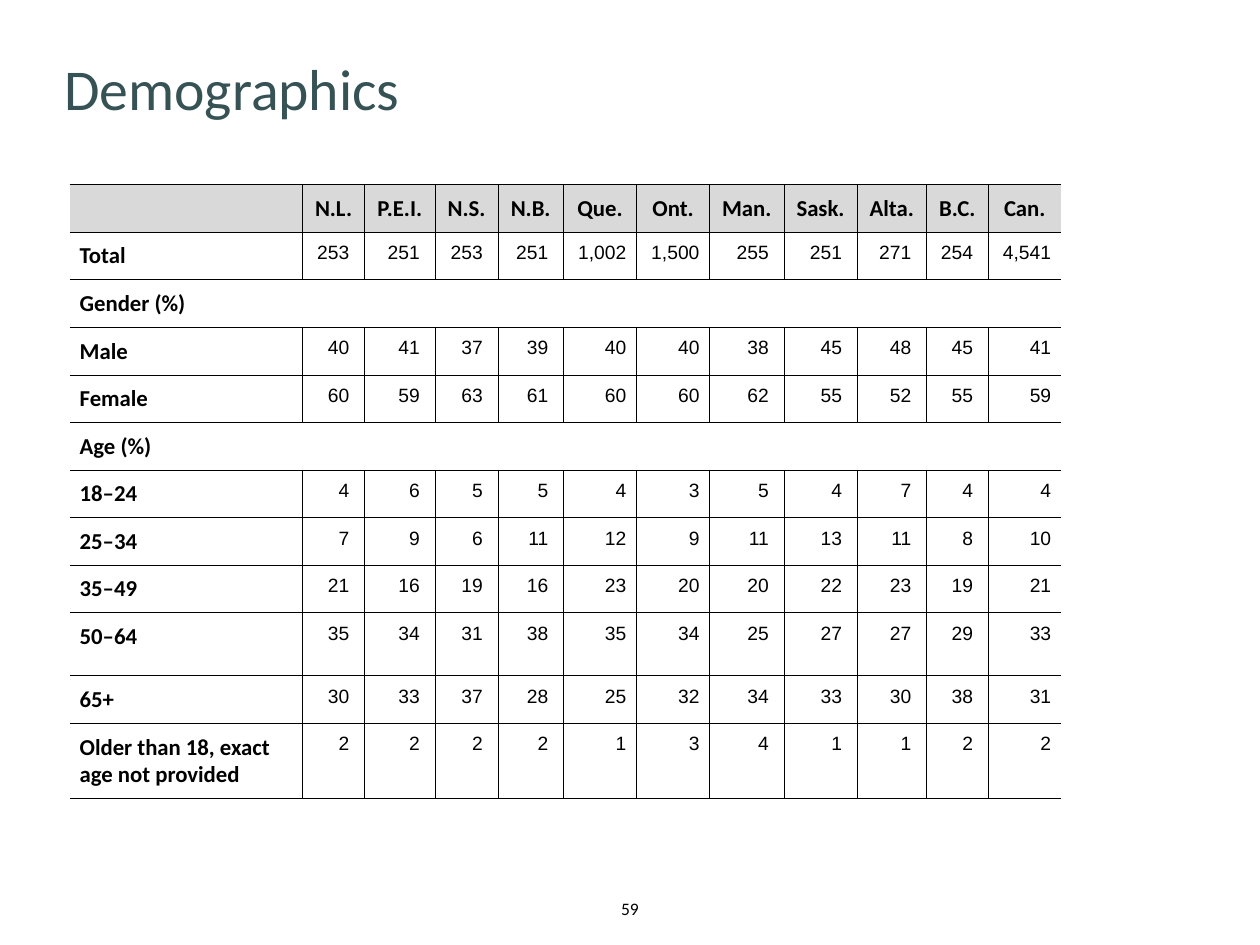
from dataclasses import dataclass

from lxml import etree
from pptx import Presentation
from pptx.dml.color import RGBColor
from pptx.enum import text
from pptx.oxml import ns
from pptx.util import Pt


@dataclass(frozen=True)
class Theme:
    ink: str = "000000"
    title: str = "365254"
    header: str = "D9D9D9"
    label_font: str = "Calibri"
    number_font: str = "Arial"
    title_size: float = 33
    label_size: float = 13
    number_size: float = 11
    footer_size: float = 10
    border: float = 0.5


THEME = Theme()
INSET = 5.76
WIDE_INSET = 8.64
ROW_HEIGHT = 27.2
TALL_ROWS = {"50–64": 36, "Older than 18, exact age not provided": 43}
COLUMN_WIDTHS = [133.2, 35.3, 40.3, 36, 37.4, 41.8, 41.8, 42.5, 41.8, 39.6, 35.3, 41.8]
TIGHT_COLUMNS = {"Que.", "Ont.", "Can."}
REGIONS = ["N.L.", "P.E.I.", "N.S.", "N.B.", "Que.", "Ont.",
           "Man.", "Sask.", "Alta.", "B.C.", "Can."]
ROWS = [
    ("Total", ["253", "251", "253", "251", "1,002", "1,500", "255", "251", "271", "254", "4,541"]),
    ("Gender (%)", []),
    ("Male", [40, 41, 37, 39, 40, 40, 38, 45, 48, 45, 41]),
    ("Female", [60, 59, 63, 61, 60, 60, 62, 55, 52, 55, 59]),
    ("Age (%)", []),
    ("18–24", [4, 6, 5, 5, 4, 3, 5, 4, 7, 4, 4]),
    ("25–34", [7, 9, 6, 11, 12, 9, 11, 13, 11, 8, 10]),
    ("35–49", [21, 16, 19, 16, 23, 20, 20, 22, 23, 19, 21]),
    ("50–64", [35, 34, 31, 38, 35, 34, 25, 27, 27, 29, 33]),
    ("65+", [30, 33, 37, 28, 25, 32, 34, 33, 30, 38, 31]),
    ("Older than 18, exact age not provided", [2, 2, 2, 2, 1, 3, 4, 1, 1, 2, 2]),
]


def add_span(para, words, font, size, color=THEME.ink, bold=False):
    span = para.add_run()
    span.text = str(words)
    span.font.name = font
    span.font.size = Pt(size)
    span.font.bold = bold
    span.font.color.rgb = RGBColor.from_string(color)


def set_insets(item, left, top, right, bottom):
    item.margin_left, item.margin_top = Pt(left), Pt(top)
    item.margin_right, item.margin_bottom = Pt(right), Pt(bottom)


def set_borders(cell, sides):
    """Rule the given sides (letters of LRTB) and clear the others."""
    properties = cell._tc.get_or_add_tcPr()
    for side in "LRTB":
        line = etree.SubElement(properties, ns.qn(f"a:ln{side}"), w=str(Pt(THEME.border)))
        if side in sides:
            fill = etree.SubElement(line, ns.qn("a:solidFill"))
            etree.SubElement(fill, ns.qn("a:srgbClr"), val=THEME.ink)
        else:
            etree.SubElement(line, ns.qn("a:noFill"))


def style_cell(cell, sides, fill=None):
    set_borders(cell, sides)
    if fill:
        cell.fill.solid()
        cell.fill.fore_color.rgb = RGBColor.from_string(fill)
    else:
        cell.fill.background()
    # Blank cells keep no vertical inset, so they never stretch their row.
    set_insets(cell, INSET, 0, INSET, 0)


def fill_label(cell, words, align=text.PP_ALIGN.LEFT):
    set_insets(cell, INSET, INSET, INSET, INSET)
    para = cell.text_frame.paragraphs[0]
    para.alignment = align
    add_span(para, words, THEME.label_font, THEME.label_size, bold=True)


def fill_number(cell, value, region):
    right = INSET if region in TIGHT_COLUMNS else WIDE_INSET
    set_insets(cell, INSET, INSET, right, INSET)
    para = cell.text_frame.paragraphs[0]
    para.alignment = text.PP_ALIGN.RIGHT
    add_span(para, value, THEME.number_font, THEME.number_size)


def column_sides(column):
    """Rules above, below and between columns, none on the outer edges."""
    left = "L" if column > 0 else ""
    right = "R" if column < len(REGIONS) else ""
    return left + right + "TB"


def add_title(page, words):
    title = page.shapes.title
    title.left, title.top, title.width, title.height = Pt(29.5), Pt(29.5), Pt(648), Pt(44)
    title.text_frame.auto_size = text.MSO_AUTO_SIZE.SHAPE_TO_FIT_TEXT
    para = title.text_frame.paragraphs[0]
    para.alignment = text.PP_ALIGN.LEFT
    para.line_spacing = Pt(36)
    add_span(para, words, THEME.label_font, THEME.title_size, THEME.title)


def add_demographics(page):
    heights = [ROW_HEIGHT] + [TALL_ROWS.get(label, ROW_HEIGHT) for label, _ in ROWS]
    frame = page.shapes.add_table(len(heights), len(COLUMN_WIDTHS), Pt(39.8), Pt(105.5),
                                  Pt(sum(COLUMN_WIDTHS)), Pt(sum(heights)))
    table = frame.table
    table.first_row = table.horz_banding = False
    for column, width in zip(table.columns, COLUMN_WIDTHS):
        column.width = Pt(width)
    for row, height in zip(table.rows, heights):
        row.height = Pt(height)

    for column in range(len(COLUMN_WIDTHS)):
        style_cell(table.cell(0, column), column_sides(column), THEME.header)
    for column, region in enumerate(REGIONS, 1):
        cell = table.cell(0, column)
        cell.vertical_anchor = text.MSO_ANCHOR.BOTTOM
        fill_label(cell, region, text.PP_ALIGN.CENTER)

    for row, (label, values) in enumerate(ROWS, 1):
        for column in range(len(COLUMN_WIDTHS)):
            style_cell(table.cell(row, column), column_sides(column) if values else "TB")
        fill_label(table.cell(row, 0), label)
        for column, (region, value) in enumerate(zip(REGIONS, values), 1):
            fill_number(table.cell(row, column), value, region)


def add_page_number(page, number):
    box = page.shapes.add_textbox(Pt(337.5), Pt(513), Pt(45), Pt(12.2))
    frame = box.text_frame
    frame.word_wrap = True
    frame.auto_size = text.MSO_AUTO_SIZE.SHAPE_TO_FIT_TEXT
    frame.vertical_anchor = text.MSO_ANCHOR.MIDDLE
    set_insets(frame, 0, 0, 0, 0)
    para = frame.paragraphs[0]
    para.alignment = text.PP_ALIGN.CENTER
    add_span(para, number, THEME.label_font, THEME.footer_size)


def main():
    deck = Presentation()
    deck.slide_width, deck.slide_height = Pt(720), Pt(540)
    page = deck.slides.add_slide(deck.slide_layouts.get_by_name("Title Only"))
    add_page_number(page, 59)
    add_title(page, "Demographics")
    add_demographics(page)
    deck.save("out.pptx")


if __name__ == "__main__":
    main()
